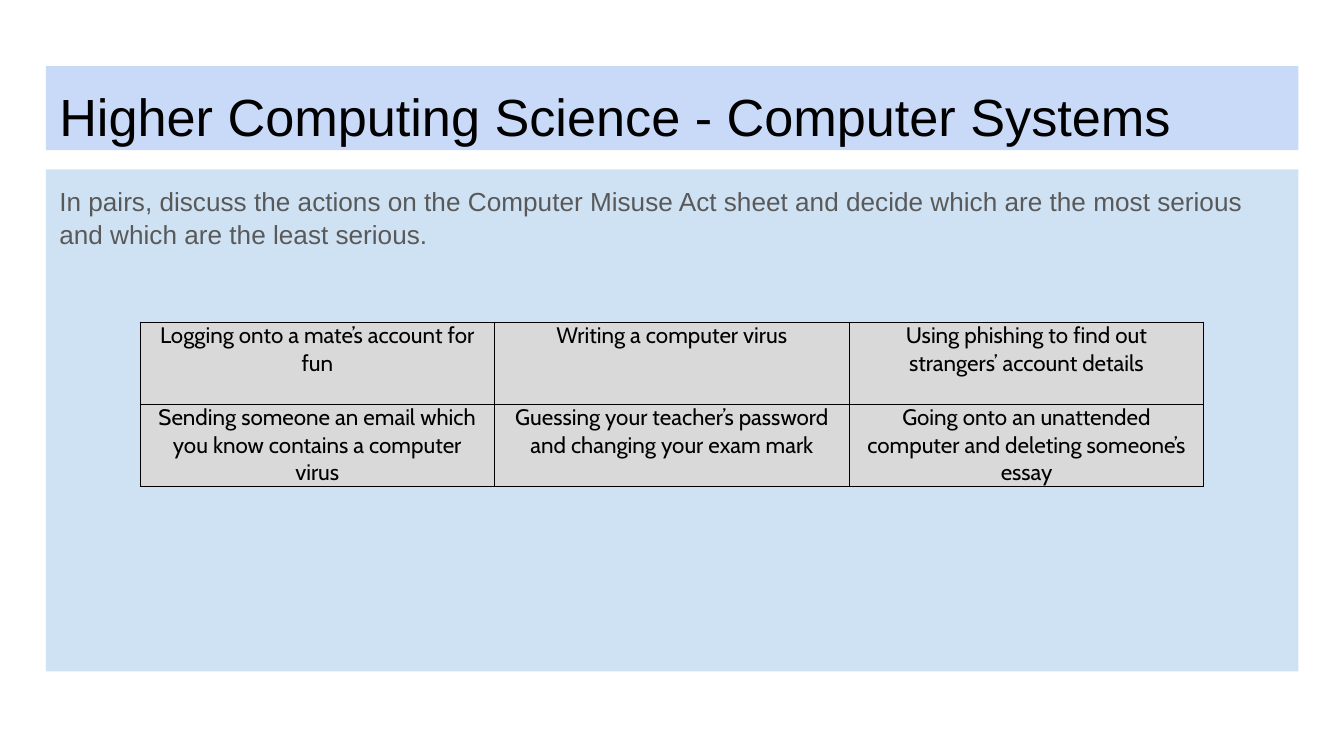
"""Build a discussion slide with a title, an instruction and a table of actions."""
import lxml.etree
import pptx
import pptx.dml.color
import pptx.enum.text
import pptx.oxml.ns
import pptx.util

Pt = pptx.util.Pt
qn = pptx.oxml.ns.qn

COLOURS = {
    "title fill": "C9DAF8", "body fill": "CFE2F3", "cell fill": "D9D9D9",
    "black": "000000", "grey": "595959",
}
PANELS = [
    {"text": "Higher Computing Science - Computer Systems",
     "box": {"left": 24.55, "top": 35.4, "width": 671, "height": 45.1},
     "fill": "title fill", "colour": "black", "size": 28},
    {"text": "In pairs, discuss the actions on the Computer Misuse Act sheet and decide "
             "which are the most serious and which are the least serious.",
     "box": {"left": 24.55, "top": 90.75, "width": 671, "height": 269},
     "fill": "body fill", "colour": "grey", "size": 14},
]
ACTIONS = [
    ["Logging onto a mate’s account for fun",
     "Writing a computer virus",
     "Using phishing to find out strangers’ account details"],
    ["Sending someone an email which you know contains a computer virus",
     "Guessing your teacher’s password and changing your exam mark",
     "Going onto an unattended computer and deleting someone’s essay"],
]
TABLE_LEFT, TABLE_TOP, COLUMN_WIDTH, ROW_HEIGHT = 75, 172.5, 190, 44
PANEL_MARGIN, CELL_MARGIN, BORDER_WIDTH = 7.2, 5.4, 0.5


def set_values(target, values):
    for name, value in values.items():
        setattr(target, name, value)


def set_fill(target, colour):
    target.fill.solid()
    target.fill.fore_color.rgb = pptx.dml.color.RGBColor.from_string(COLOURS[colour])


def format_font(paragraph, name, size, colour):
    set_values(paragraph.font, {"name": name, "size": Pt(size), "bold": False})
    set_fill(paragraph.font, colour)


def fill_panel(placeholder, panel):
    set_values(placeholder, {side: Pt(value) for side, value in panel["box"].items()})
    set_fill(placeholder, panel["fill"])
    text_frame = placeholder.text_frame
    text_frame.text = panel["text"]
    margins = {f"margin_{side}": Pt(PANEL_MARGIN) for side in ("left", "top", "right", "bottom")}
    set_values(text_frame, margins | {
        "word_wrap": True,
        "auto_size": pptx.enum.text.MSO_AUTO_SIZE.NONE,
        "vertical_anchor": pptx.enum.text.MSO_ANCHOR.TOP,
    })
    paragraph = text_frame.paragraphs[0]
    properties = paragraph._p.get_or_add_pPr()
    properties.set("marL", "0")
    properties.set("indent", "0")
    lxml.etree.SubElement(properties, qn("a:buNone"))
    set_values(paragraph, {
        "alignment": pptx.enum.text.PP_ALIGN.LEFT,
        "space_before": Pt(0),
        "line_spacing": 1.07,
    })
    format_font(paragraph, "Arial", panel["size"], panel["colour"])


def add_borders(cell):
    properties = cell._tc.get_or_add_tcPr()
    for position, side in enumerate(("lnL", "lnR", "lnT", "lnB")):
        line = lxml.etree.Element(qn(f"a:{side}"), w=str(Pt(BORDER_WIDTH)))
        solid = lxml.etree.SubElement(line, qn("a:solidFill"))
        lxml.etree.SubElement(solid, qn("a:srgbClr"), val=COLOURS["black"])
        properties.insert(position, line)


def fill_cell(cell, text):
    cell.text = text
    set_values(cell, {
        "margin_left": Pt(CELL_MARGIN), "margin_right": Pt(CELL_MARGIN),
        "margin_top": 0, "margin_bottom": 0,
        "vertical_anchor": pptx.enum.text.MSO_ANCHOR.TOP,
    })
    set_fill(cell, "cell fill")
    add_borders(cell)
    paragraph = cell.text_frame.paragraphs[0]
    paragraph.alignment = pptx.enum.text.PP_ALIGN.CENTER
    format_font(paragraph, "Cabin", 12, "black")


def add_actions(slide):
    row_count, column_count = len(ACTIONS), len(ACTIONS[0])
    table = slide.shapes.add_table(
        row_count, column_count, Pt(TABLE_LEFT), Pt(TABLE_TOP),
        Pt(COLUMN_WIDTH * column_count), Pt(ROW_HEIGHT * row_count)).table
    set_values(table, {"first_row": False, "horz_banding": False})
    for row, texts in enumerate(ACTIONS):
        for column, text in enumerate(texts):
            fill_cell(table.cell(row, column), text)


def main():
    presentation = pptx.Presentation()
    set_values(presentation, {"slide_width": Pt(720), "slide_height": Pt(405)})
    slide = presentation.slides.add_slide(presentation.slide_layouts[1])
    for placeholder, panel in zip(slide.placeholders, PANELS):
        fill_panel(placeholder, panel)
    add_actions(slide)
    presentation.save("out.pptx")


if __name__ == "__main__":
    main()
